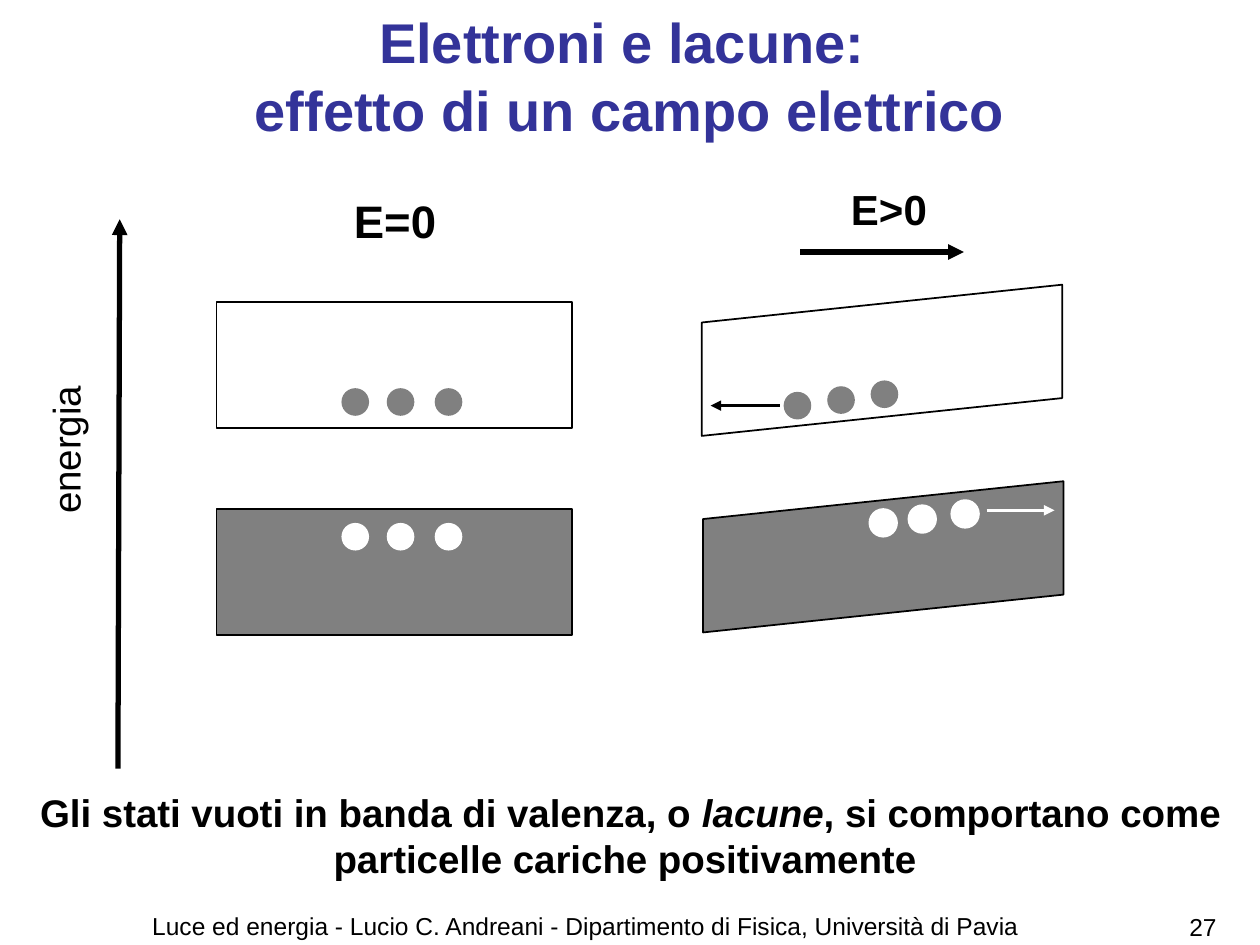
"""Builds a slide on electrons and holes in an electric field."""
from dataclasses import dataclass

from lxml.etree import SubElement
from pptx import Presentation
from pptx.dml.color import RGBColor as Rgb
from pptx.enum.shapes import MSO_CONNECTOR as Link, MSO_SHAPE as Kind
from pptx.enum.text import MSO_ANCHOR as Anchor, PP_ALIGN as Align
from pptx.oxml.ns import qn
from pptx.util import Pt

INK = {"black": "000000", "white": "FFFFFF", "gray": "808080", "blue": "333399"}
DOT = 15.8


@dataclass
class Band:
    x: float
    y: float
    wide: float
    high: float
    fill: str
    tilt: bool = False


@dataclass
class Row:
    spots: list[tuple[float, float]]
    fill: str
    edge: bool = False


@dataclass
class Arrow:
    start: tuple[float, float]
    end: tuple[float, float]
    width: float
    ink: str = "black"


@dataclass
class Label:
    x: float
    y: float
    wide: float
    high: float
    words: list[str]
    size: float
    bold: bool = False
    ink: str = "black"
    align: Align = Align.CENTER
    anchor: Anchor = Anchor.TOP
    turn: float = 0
    wrap: bool = True


BANDS = [
    Band(461.5, 215.3, 86.4, 205.9, "gray", True),
    Band(460.8, 103, 86.4, 205.9, "white", True),
    Band(123.8, 290.9, 203, 72, "gray"),
    Band(123.8, 172.8, 203, 72, "white"),
]
COLS = (195.1, 221, 248.4)
ROWS = [
    Row([(496.8, 290.9), (519.1, 288.7), (543.6, 285.8)], "white", True),
    Row([(447.8, 223.9), (472.7, 220.7), (497.5, 217.4)], "gray"),
    Row([(x, 298.8) for x in COLS], "white"),
    Row([(x, 221.8) for x in COLS], "gray"),
]
ARROWS = [
    Arrow((67.4, 439.2), (68.4, 125.3), 3),
    Arrow((457.2, 144), (550.8, 144), 3),
    Arrow((445.7, 231.8), (406.1, 231.8), 2),
    Arrow((563.8, 291.6), (602.6, 291.6), 2, "white"),
]
LABELS = [
    Label(178.6, 106.6, 94.3, 37.4, ["E=0"], 26, True),
    Label(479.5, 101.5, 56.9, 35.3, ["E>0"], 24, True, wrap=False),
    Label(-6.5, 240.5, 87.1, 33.1, ["energia"], 22, turn=270, wrap=False),
    Label(15.8, 447.1, 689, 59.8,
          ["Gli stati vuoti in banda di valenza, o ", "lacune",
           ", si comportano come particelle cariche positivamente "], 22, True),
    Label(36, 9.4, 648, 67, ["Elettroni e lacune: \veffetto di un campo elettrico"],
          32, True, "blue", anchor=Anchor.MIDDLE),
    Label(14.4, 517, 640.8, 25.9,
          ["Luce ed energia - Lucio C. Andreani - Dipartimento di Fisica, "
           "Università di Pavia"], 14),
    Label(671, 517.7, 34.6, 37.4, ["27 "], 14, align=Align.RIGHT),
]


def tint(name: str) -> Rgb:
    """Return the named colour."""
    return Rgb.from_string(INK[name])


def add_form(shapes, kind: Kind, box: tuple, fill: str, edge: str | None):
    """Add a filled shape with an optional thin edge."""
    form = shapes.add_shape(kind, *map(Pt, box))
    form.shadow.inherit = False
    form.fill.solid()
    form.fill.fore_color.rgb = tint(fill)
    if edge:
        form.line.color.rgb = tint(edge)
        form.line.width = Pt(1)
    else:
        form.line.fill.background()
    return form


def add_band(shapes, band: Band) -> None:
    """Add an energy band, level or tilted by the field."""
    kind = Kind.PARALLELOGRAM if band.tilt else Kind.RECTANGLE
    box = (band.x, band.y, band.wide, band.high)
    form = add_form(shapes, kind, box, band.fill, "black")
    if band.tilt:
        form.adjustments[0] = 0.25
        form.rotation = 270
        form.element.spPr.find(qn("a:xfrm")).set("flipV", "1")


def add_row(shapes, row: Row) -> None:
    """Add a row of charge carriers."""
    for x, y in row.spots:
        edge = row.fill if row.edge else None
        add_form(shapes, Kind.OVAL, (x, y, DOT, DOT), row.fill, edge)


def add_arrow(shapes, arrow: Arrow) -> None:
    """Add a straight arrow with a triangle head."""
    ends = map(Pt, arrow.start + arrow.end)
    link = shapes.add_connector(Link.STRAIGHT, *ends)
    link.line.color.rgb = tint(arrow.ink)
    link.line.width = Pt(arrow.width)
    props = link.element.spPr
    SubElement(props.find(qn("a:ln")), qn("a:tailEnd"), type="triangle")
    SubElement(props, qn("a:effectLst"))


def add_label(shapes, label: Label) -> None:
    """Add a text box whose second piece, if any, is italic."""
    box = shapes.add_textbox(*map(Pt, (label.x, label.y, label.wide, label.high)))
    box.rotation = label.turn
    frame = box.text_frame
    frame.word_wrap = label.wrap
    frame.vertical_anchor = label.anchor
    frame.margin_left = frame.margin_right = Pt(6.5)
    para = frame.paragraphs[0]
    para.alignment = label.align
    para.text = label.words[0]
    for word in label.words[1:]:
        para.add_run().text = word
    for run in para.runs:
        font = run.font
        font.name = "Arial"
        font.size = Pt(label.size)
        font.bold = label.bold
        font.italic = run.text in label.words[1:2]
        font.color.rgb = tint(label.ink)


def main() -> None:
    """Build and save the slide."""
    deck = Presentation()
    deck.slide_width, deck.slide_height = Pt(720), Pt(540)
    shapes = deck.slides.add_slide(deck.slide_layouts[6]).shapes
    for items, draw in ((BANDS, add_band), (ROWS, add_row),
                        (ARROWS, add_arrow), (LABELS, add_label)):
        for item in items:
            draw(shapes, item)
    deck.save("out.pptx")


if __name__ == "__main__":
    main()
